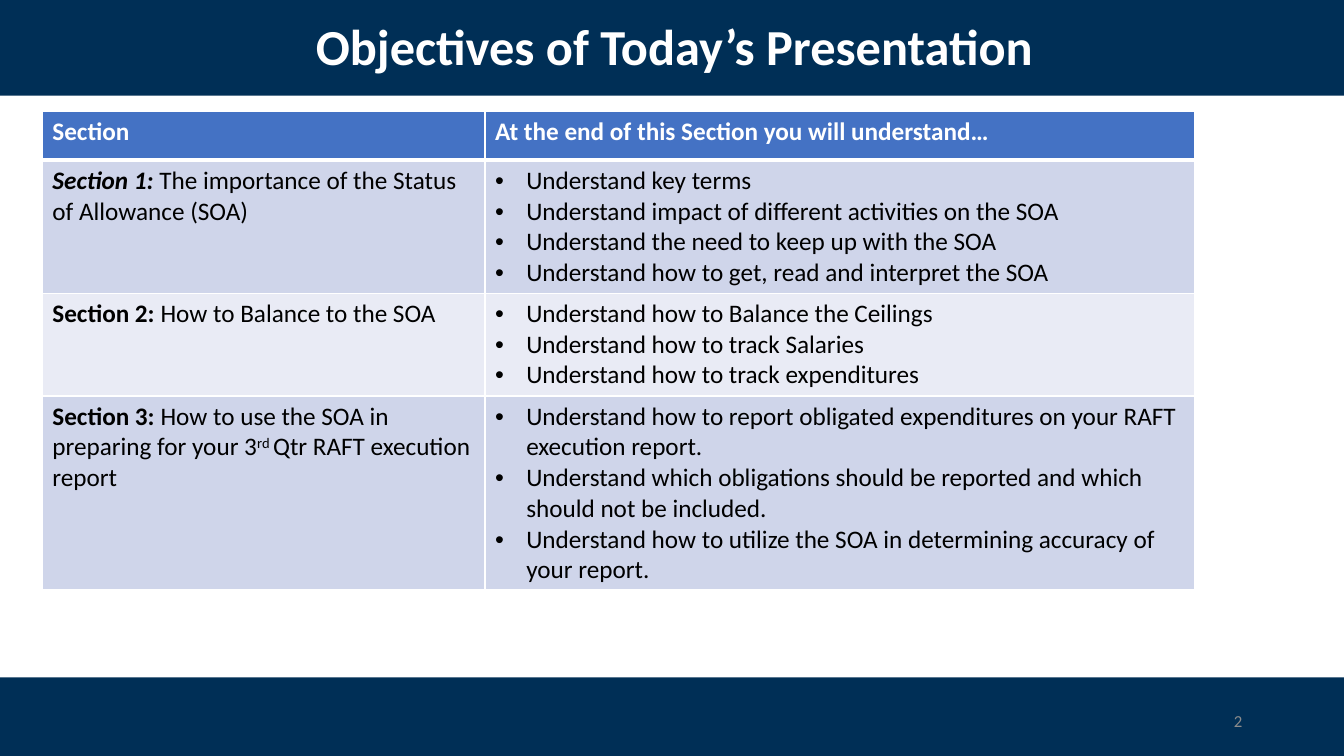
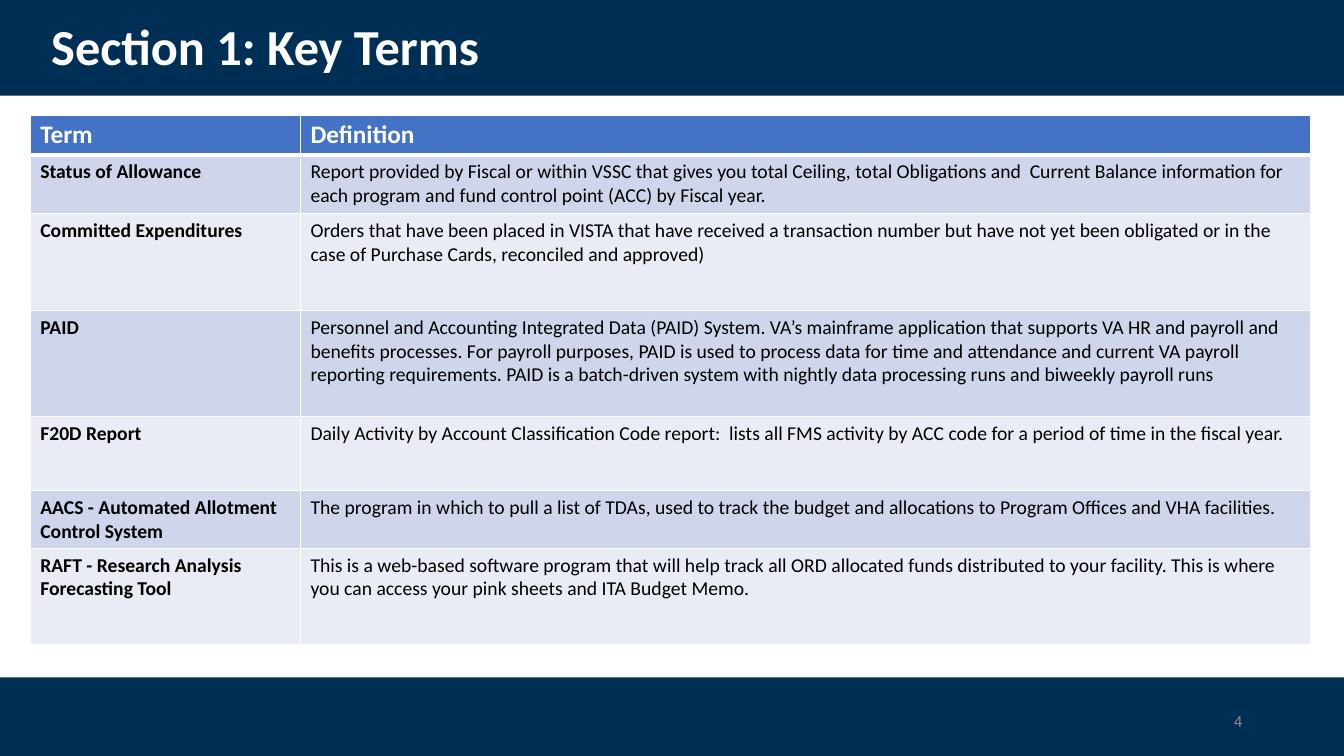
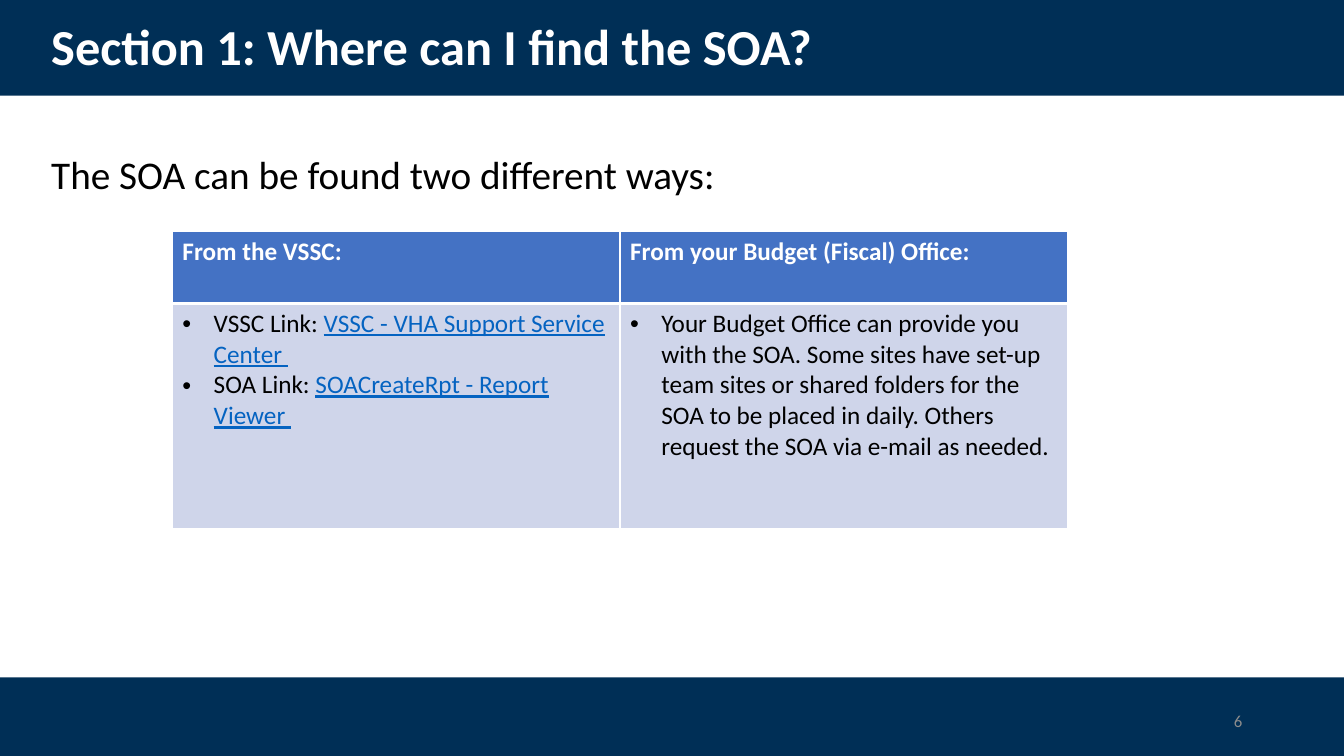
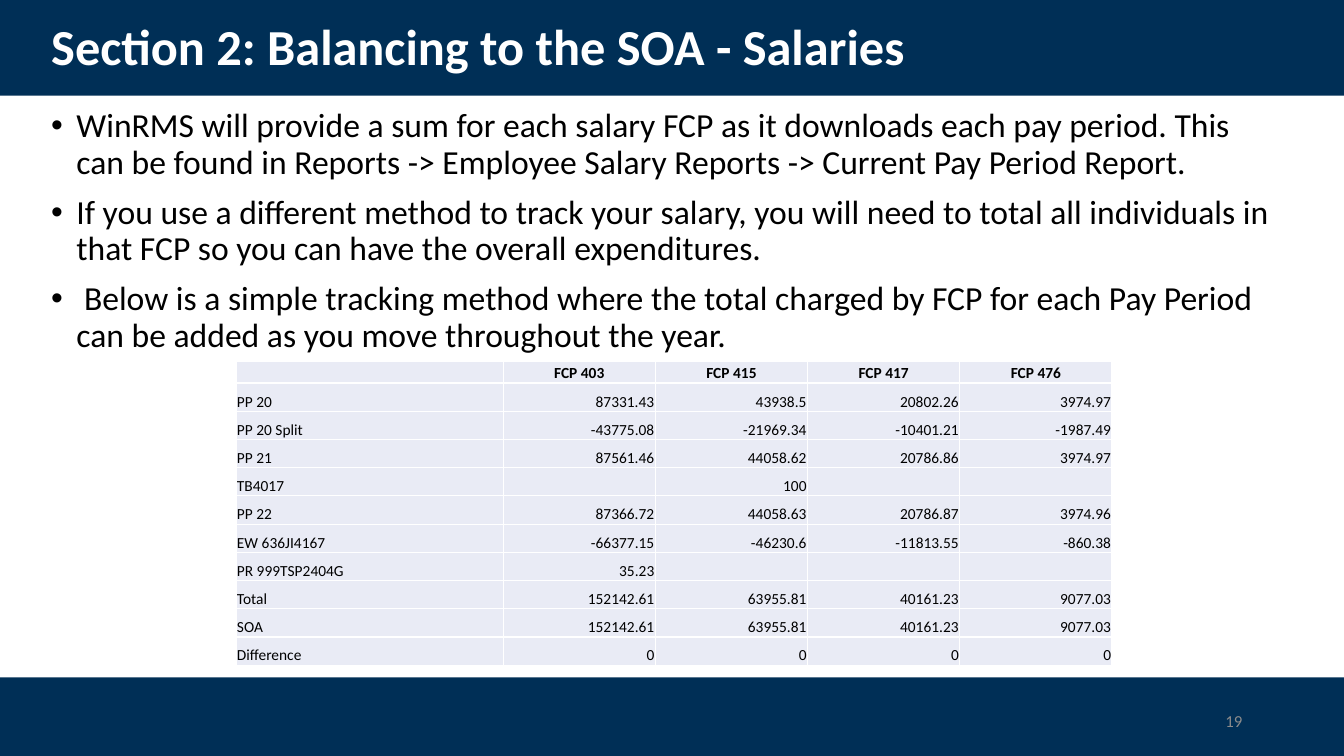
from lxml.etree import SubElement
from pptx import Presentation
from pptx.dml.color import RGBColor
from pptx.enum.shapes import MSO_SHAPE
from pptx.enum.text import MSO_ANCHOR, PP_ALIGN
from pptx.oxml.ns import qn
from pptx.util import Inches, Pt

NAVY = RGBColor(0x00, 0x2F, 0x56)
BLUE = RGBColor(0x44, 0x72, 0xC4)
BAND_DARK = RGBColor(0xCF, 0xD5, 0xEA)
BAND_LIGHT = RGBColor(0xE9, 0xEB, 0xF5)
LINK = RGBColor(0x05, 0x63, 0xC1)
GREY = RGBColor(0x8C, 0x8C, 0x8C)
WHITE = RGBColor(0xFF, 0xFF, 0xFF)
BLACK = RGBColor(0x00, 0x00, 0x00)

SLIDE_WIDTH, SLIDE_HEIGHT = 13.33, 7.5
BANDS = [(0, 0.95), (6.72, 0.8)]
TITLE_BOX = (0.41, 0.15, 12.56, 0.68)
NUMBER_BOX = (9.42, 6.95, 3, 0.4)
CELL_INDENT, BODY_INDENT = 0.31, 0.25

TITLE = {"name": "Calibri", "size": Pt(36), "bold": True, "color": WHITE}
NUMBER = {"name": "Calibri", "size": Pt(12), "color": GREY}
HEADER = {"name": "Calibri", "size": Pt(18), "bold": True, "color": WHITE}
CELL = {"name": "Calibri", "size": Pt(18), "bold": False, "color": BLACK}
TERM_CELL = {**CELL, "size": Pt(14)}
SALARY_CELL = {**CELL, "size": Pt(11)}
LEAD = {"name": "Calibri", "size": Pt(28), "color": BLACK}
BULLET = {**LEAD, "size": Pt(24)}
BOLD = {"bold": True}
BOLD_ITALIC = {"bold": True, "italic": True}
LINKED = {"color": LINK, "underline": True}
RAISED = {"baseline": "30000"}

OBJECTIVES = [
    (
        [[("Section 1: ", BOLD_ITALIC), ("The importance of the Status of Allowance (SOA)", {})]],
        [
            "Understand key terms",
            "Understand impact of different activities on the SOA",
            "Understand the need to keep up with the SOA",
            "Understand how to get, read and interpret the SOA",
        ],
    ),
    (
        [[("Section 2: ", BOLD), ("How to Balance to the SOA", {})]],
        [
            "Understand how to Balance the Ceilings",
            "Understand how to track Salaries",
            "Understand how to track expenditures",
        ],
    ),
    (
        [[
            ("Section 3: ", BOLD),
            ("How to use the SOA in preparing for your 3", {}),
            ("rd ", RAISED),
            ("Qtr RAFT execution report", {}),
        ]],
        [
            "Understand how to report obligated expenditures on your RAFT execution report.",
            "Understand which obligations should be reported and which should not be included.",
            "Understand how to utilize the SOA in determining accuracy of your report.",
        ],
    ),
]

TERMS = [
    ("Status of Allowance",
     "Report provided by Fiscal or within VSSC that gives you total Ceiling, total Obligations and "
     " Current Balance information for each program and fund control point (ACC) by Fiscal year."),
    ("Committed Expenditures",
     "Orders that have been placed in VISTA that have received a transaction number but have not "
     "yet been obligated or in the case of Purchase Cards, reconciled and approved)"),
    ("PAID",
     "Personnel and Accounting Integrated Data (PAID) System. VA’s mainframe application that "
     "supports VA HR and payroll and benefits processes. For payroll purposes, PAID is used to "
     "process data for time and attendance and current VA payroll reporting requirements. PAID is "
     "a batch-driven system with nightly data processing runs and biweekly payroll runs"),
    ("F20D Report",
     "Daily Activity by Account Classification Code report:  lists all FMS activity by ACC code "
     "for a period of time in the fiscal year."),
    ("AACS - Automated Allotment Control System",
     "The program in which to pull a list of TDAs, used to track the budget and allocations to "
     "Program Offices and VHA facilities."),
    ("RAFT - Research Analysis Forecasting Tool",
     "This is a web-based software program that will help track all ORD allocated funds "
     "distributed to your facility. This is where you can access your pink sheets and ITA Budget "
     "Memo."),
]

SOA_SOURCES = [
    [
        [("VSSC Link: ", {}), ("VSSC - VHA Support Service Center ", LINKED)],
        [("SOA Link: ", {}), ("SOACreateRpt - Report Viewer ", LINKED)],
    ],
    [
        "Your Budget Office can provide you with the SOA. Some sites have set-up team sites or "
        "shared folders for the SOA to be placed in daily. Others request the SOA via e-mail as "
        "needed."
    ],
]

SALARY_NOTES = [
    "WinRMS will provide a sum for each salary FCP as it downloads each pay period. This can be "
    "found in Reports -> Employee Salary Reports -> Current Pay Period Report.",
    "If you use a different method to track your salary, you will need to total all individuals "
    "in that FCP so you can have the overall expenditures.",
    " Below is a simple tracking method where the total charged by FCP for each Pay Period can be "
    "added as you move throughout the year.",
]

SALARIES = [
    ("", "FCP 403", "FCP 415", "FCP 417", "FCP 476"),
    ("PP 20", "87331.43", "43938.5", "20802.26", "3974.97"),
    ("PP 20 Split", "-43775.08", "-21969.34", "-10401.21", "-1987.49"),
    ("PP 21", "87561.46", "44058.62", "20786.86", "3974.97"),
    ("TB4017", "", "100", "", ""),
    ("PP 22", "87366.72", "44058.63", "20786.87", "3974.96"),
    ("EW 636JI4167", "-66377.15", "-46230.6", "-11813.55", "-860.38"),
    ("PR 999TSP2404G", "35.23", "", "", ""),
    ("Total", "152142.61", "63955.81", "40161.23", "9077.03"),
    ("SOA", "152142.61", "63955.81", "40161.23", "9077.03"),
    ("Difference", "0", "0", "0", "0"),
]


def apply_font(font, style):
    for key, value in style.items():
        if key == "color":
            font.color.rgb = value
        elif key == "baseline":
            font._element.set(key, value)
        else:
            setattr(font, key, value)


def write(frame, paragraphs, style, align=PP_ALIGN.LEFT, indent=None, line=None, gap=0):
    frame.word_wrap = True
    for index, content in enumerate(paragraphs):
        paragraph = frame.add_paragraph() if index else frame.paragraphs[0]
        paragraph.alignment = align
        if line:
            paragraph.line_spacing = line
        if index and gap:
            paragraph.space_before = Pt(gap)
        if indent:
            properties = paragraph._p.get_or_add_pPr()
            properties.set("marL", str(Inches(indent)))
            properties.set("indent", str(-Inches(indent)))
            SubElement(properties, qn("a:buFont"), typeface="Arial")
            SubElement(properties, qn("a:buChar"), char="•")
        if not content:
            SubElement(paragraph._p, qn("a:endParaRPr"), sz=str(int(style["size"].pt * 100)))
            continue
        for text, extra in [(content, {})] if isinstance(content, str) else content:
            run = paragraph.add_run()
            run.text = text
            apply_font(run.font, {**style, **extra})


def add_text(slide, box, paragraphs, style, anchor=MSO_ANCHOR.TOP, **layout):
    frame = slide.shapes.add_textbox(*map(Inches, box)).text_frame
    frame.vertical_anchor = anchor
    write(frame, paragraphs, style, **layout)


def add_base(deck, title, number, align=PP_ALIGN.LEFT):
    slide = deck.slides.add_slide(deck.slide_layouts[6])
    for top, height in BANDS:
        band = slide.shapes.add_shape(
            MSO_SHAPE.RECTANGLE, 0, Inches(top), Inches(SLIDE_WIDTH), Inches(height))
        band.shadow.inherit = False
        band.fill.solid()
        band.fill.fore_color.rgb = NAVY
        band.line.fill.background()
    add_text(slide, TITLE_BOX, [title], TITLE, MSO_ANCHOR.MIDDLE, align=align, line=0.9)
    add_text(slide, NUMBER_BOX, [number], NUMBER, MSO_ANCHOR.MIDDLE, align=PP_ALIGN.RIGHT)
    return slide


def style_cell(cell, color, top=1, bottom=1):
    properties = cell._tc.get_or_add_tcPr()
    for side, width in (("L", 1), ("R", 1), ("T", top), ("B", bottom)):
        border = SubElement(properties, qn(f"a:ln{side}"), w=str(Pt(width)))
        SubElement(SubElement(border, qn("a:solidFill")), qn("a:srgbClr"), val=str(WHITE))
    cell.fill.solid()
    cell.fill.fore_color.rgb = color


def add_grid(slide, left, top, widths, heights):
    table = slide.shapes.add_table(
        len(heights), len(widths), Inches(left), Inches(top),
        Inches(sum(widths)), Inches(sum(heights))).table
    table.first_row = table.horz_banding = False
    for column, width in zip(table.columns, widths):
        column.width = Inches(width)
    for row, height in zip(table.rows, heights):
        row.height = Inches(height)
    return table


def add_banded_table(slide, left, top, widths, heights, headers, rows, style, bulleted=(), bold=()):
    table = add_grid(slide, left, top, widths, heights)
    for column, header in enumerate(headers):
        cell = table.cell(0, column)
        style_cell(cell, BLUE, bottom=3)
        write(cell.text_frame, [header], HEADER)
    for number, row in enumerate(rows, 1):
        for column, content in enumerate(row):
            cell = table.cell(number, column)
            style_cell(cell, BAND_DARK if number % 2 else BAND_LIGHT, top=3 if number == 1 else 1)
            paragraphs = [content] if isinstance(content, str) else content
            write(cell.text_frame, paragraphs, {**style, "bold": column in bold},
                  indent=CELL_INDENT if column in bulleted else None)


def add_salary_table(slide):
    heights = [0.21] + [0.28] * (len(SALARIES) - 1)
    table = add_grid(slide, 2.34, 3.59, [2.65] + [1.51] * 4, heights)
    margins = {"margin_left": 0.01, "margin_right": 0.01, "margin_top": 0.01, "margin_bottom": 0}
    for number, row in enumerate(SALARIES):
        for column, text in enumerate(row):
            cell = table.cell(number, column)
            style_cell(cell, BAND_LIGHT)
            cell.vertical_anchor = MSO_ANCHOR.BOTTOM
            for side, margin in margins.items():
                setattr(cell, side, Inches(margin))
            align = PP_ALIGN.RIGHT if column else PP_ALIGN.LEFT
            write(cell.text_frame, [text], {**SALARY_CELL, "bold": number == 0},
                  align=align if number else PP_ALIGN.CENTER)


def main():
    deck = Presentation()
    deck.slide_width, deck.slide_height = Inches(SLIDE_WIDTH), Inches(SLIDE_HEIGHT)

    objectives = add_base(deck, "Objectives of Today’s Presentation", "2", PP_ALIGN.CENTER)
    add_banded_table(
        objectives, 0.42, 1.11, [4.39, 7.04], [0.48, 1.32, 1.02, 1.92],
        ["Section", "At the end of this Section you will understand…"],
        OBJECTIVES, CELL, bulleted=(1,))

    terms = add_base(deck, "Section 1: Key Terms", "4")
    add_banded_table(
        terms, 0.3, 1.14, [2.68, 10.02], [0.4, 0.58, 0.96, 1.05, 0.74, 0.57, 0.96],
        ["Term", "Definition"], TERMS, TERM_CELL, bold=(0,))

    finding = add_base(deck, "Section 1: Where can I find the SOA?", "6")
    add_text(finding, (0.41, 1.49, 11.5, 4.76),
             ["The SOA can be found two different ways:"], LEAD, line=0.9)
    add_banded_table(
        finding, 1.71, 2.3, [4.44, 4.44], [0.71, 2.23],
        ["From the VSSC:", "From your Budget (Fiscal) Office:"],
        [SOA_SOURCES], CELL, bulleted=(0, 1))

    salaries = add_base(deck, "Section 2: Balancing to the SOA - Salaries", "19")
    add_text(salaries, (0.41, 1.03, 12.28, 3.42), SALARY_NOTES, BULLET,
             indent=BODY_INDENT, line=0.9, gap=10)
    add_salary_table(salaries)

    deck.save("out.pptx")


if __name__ == "__main__":
    main()
